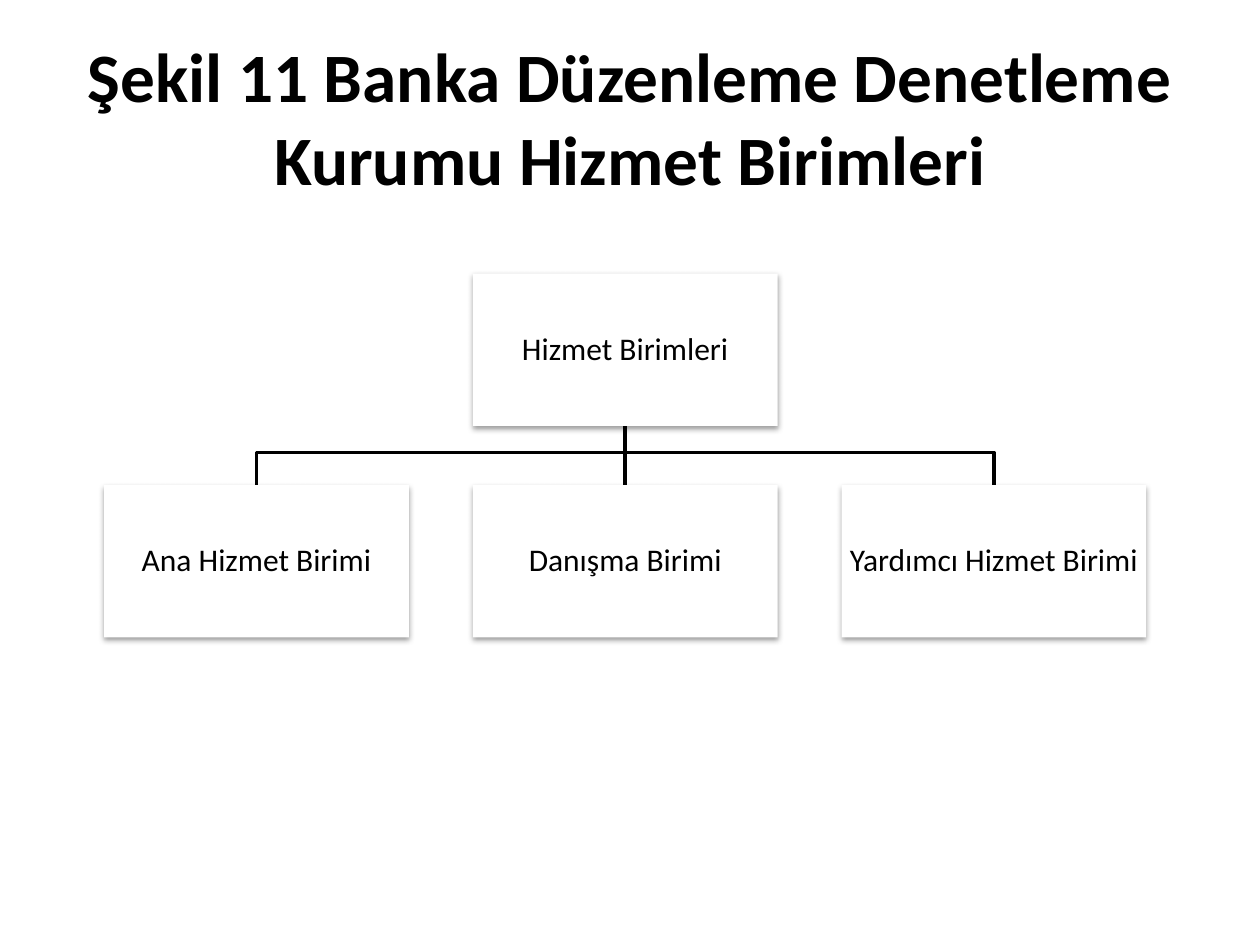
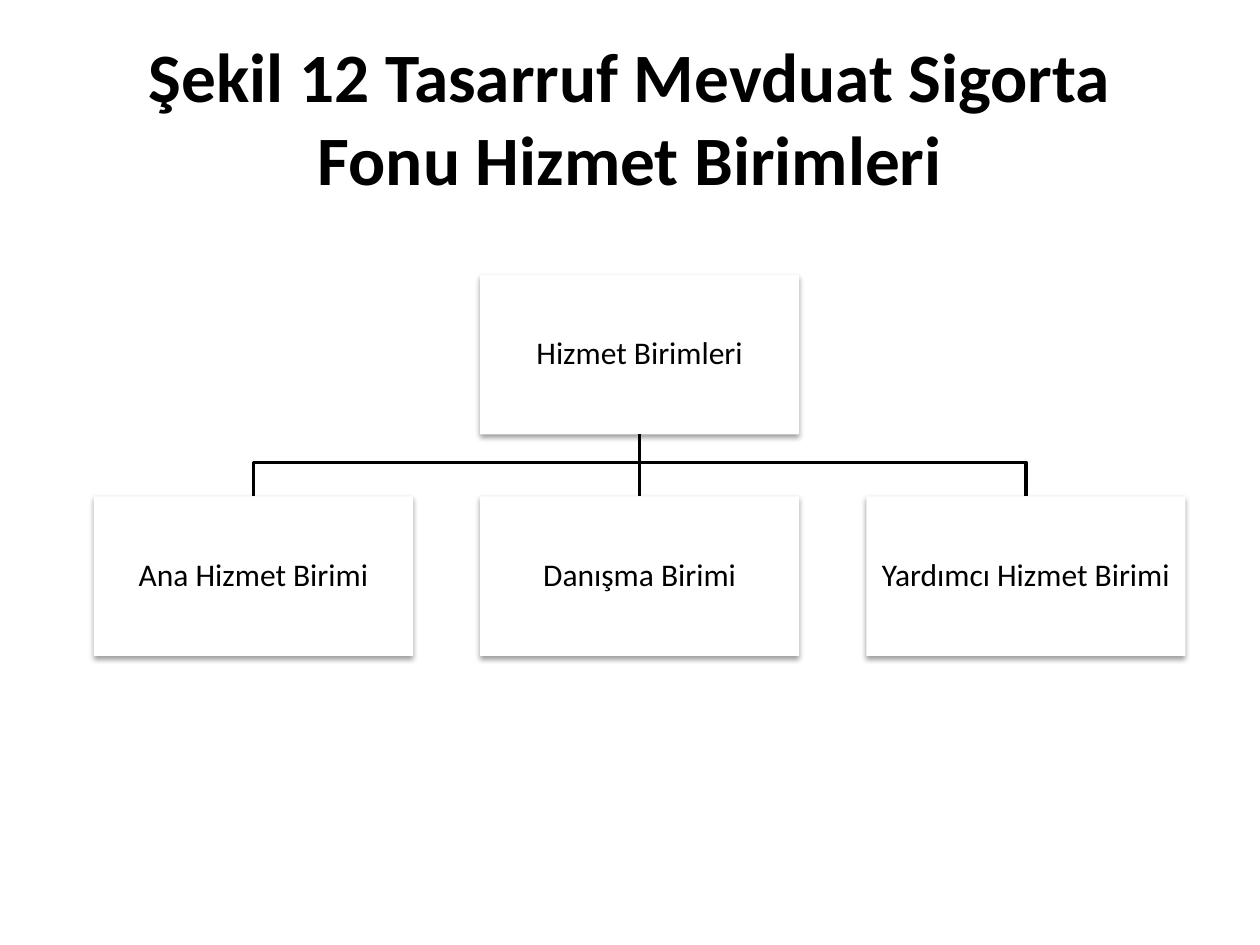
from dataclasses import dataclass

from lxml import etree
from pptx import Presentation
from pptx import util as u
from pptx.dml.color import RGBColor
from pptx.enum import shapes, text
from pptx.oxml import ns


@dataclass(frozen=True)
class Theme:
    font: str = "Calibri"
    ink: RGBColor = RGBColor(0, 0, 0)
    paper: RGBColor = RGBColor(255, 255, 255)
    title_size: float = 39.6
    unit_size: float = 18
    line_width: float = 2
    shadow_blur: float = 3.15
    shadow_distance: float = 1.57
    shadow_alpha: int = 38


@dataclass(frozen=True)
class Box:
    left: float
    top: float
    width: float
    height: float

    @property
    def center(self):
        return self.left + self.width / 2

    @property
    def bottom(self):
        return self.top + self.height

    def lengths(self):
        return [u.Pt(value) for value in (self.left, self.top, self.width, self.height)]


THEME = Theme()
TITLE_BOX = Box(36, 21.6, 648, 90)
COLUMN_GAP = 0.21
ROW_GAP = 0.194
BUS_POSITION = 0.45
ROOT = "Hizmet Birimleri"
UNITS = ["Ana Hizmet Birimi", "Danışma Birimi", "Yardımcı Hizmet Birimi"]
SLIDES = [
    ("Şekil 11 Banka Düzenleme Denetleme Kurumu Hizmet Birimleri", Box(59.5, 156.4, 595.5, 208)),
    ("Şekil 12 Tasarruf Mevduat Sigorta Fonu Hizmet Birimleri", Box(53.7, 157.1, 623.7, 218)),
]


def write_text(shape, content, *, size, bold=False, spacing=1.0, margins=(7.2, 3.6)):
    frame = shape.text_frame
    frame.word_wrap = True
    frame.vertical_anchor = text.MSO_ANCHOR.MIDDLE
    frame.margin_left = frame.margin_right = u.Pt(margins[0])
    frame.margin_top = frame.margin_bottom = u.Pt(margins[1])
    paragraph = frame.paragraphs[0]
    paragraph.alignment = text.PP_ALIGN.CENTER
    paragraph.line_spacing = spacing
    run = paragraph.add_run()
    run.text = content
    run.font.name = THEME.font
    run.font.size = u.Pt(size)
    run.font.bold = bold
    run.font.color.rgb = THEME.ink


def add_title(slide, box, content):
    shape = slide.shapes.add_textbox(*box.lengths())
    write_text(shape, content, size=THEME.title_size, bold=True)


def add_soft_shadow(shape):
    shape.shadow.inherit = False
    effects = shape._element.spPr.find(ns.qn("a:effectLst"))
    shadow = etree.SubElement(
        effects, ns.qn("a:outerShdw"), blurRad=str(u.Pt(THEME.shadow_blur)),
        dist=str(u.Pt(THEME.shadow_distance)), dir="5400000", rotWithShape="0")
    color = etree.SubElement(shadow, ns.qn("a:srgbClr"), val=str(THEME.ink))
    etree.SubElement(color, ns.qn("a:alpha"), val=str(THEME.shadow_alpha * 1000))


def add_unit(slide, box, content):
    shape = slide.shapes.add_shape(shapes.MSO_SHAPE.RECTANGLE, *box.lengths())
    shape.fill.solid()
    shape.fill.fore_color.rgb = THEME.paper
    shape.line.fill.background()
    add_soft_shadow(shape)
    write_text(shape, content, size=THEME.unit_size, spacing=0.9, margins=(0.8, 0.8))
    return shape


def style_line(line):
    line.color.rgb = THEME.ink
    line.width = u.Pt(THEME.line_width)


def add_branch(slide, parent, child):
    bus = parent.bottom + (child.top - parent.bottom) * BUS_POSITION
    points = [(u.Pt(x), u.Pt(y)) for x, y in (
        (parent.center, parent.bottom), (parent.center, bus),
        (child.center, bus), (child.center, child.top))]
    builder = slide.shapes.build_freeform(*points[0], scale=1.0)
    builder.add_line_segments(points[1:], close=False)
    branch = builder.convert_to_shape()
    branch.fill.background()
    branch.shadow.inherit = False
    style_line(branch.line)


def add_straight_link(slide, parent, child):
    link = slide.shapes.add_connector(shapes.MSO_CONNECTOR.STRAIGHT, 0, 0, 0, 0)
    link.begin_connect(parent, 2)
    link.end_connect(child, 0)
    style_line(link.line)
    etree.SubElement(link._element.spPr, ns.qn("a:effectLst"))


def add_organization_chart(slide, box, root, units):
    count = len(units)
    width = box.width / (count + (count - 1) * COLUMN_GAP)
    height = width / 2
    root_box = Box(box.center - width / 2, box.top, width, height)
    row_top = root_box.bottom + width * ROW_GAP
    unit_boxes = [Box(box.left + index * width * (1 + COLUMN_GAP), row_top, width, height)
                  for index in range(count)]
    middle = count // 2
    for index, unit_box in enumerate(unit_boxes):
        if index != middle:
            add_branch(slide, root_box, unit_box)
    root_shape = add_unit(slide, root_box, root)
    unit_shapes = [add_unit(slide, unit_box, name) for unit_box, name in zip(unit_boxes, units)]
    add_straight_link(slide, root_shape, unit_shapes[middle])


def main():
    presentation = Presentation()
    presentation.slide_width = u.Pt(720)
    presentation.slide_height = u.Pt(540)
    for title, chart_box in SLIDES:
        slide = presentation.slides.add_slide(presentation.slide_layouts[6])
        add_title(slide, TITLE_BOX, title)
        add_organization_chart(slide, chart_box, ROOT, UNITS)
    presentation.save("out.pptx")


if __name__ == "__main__":
    main()
